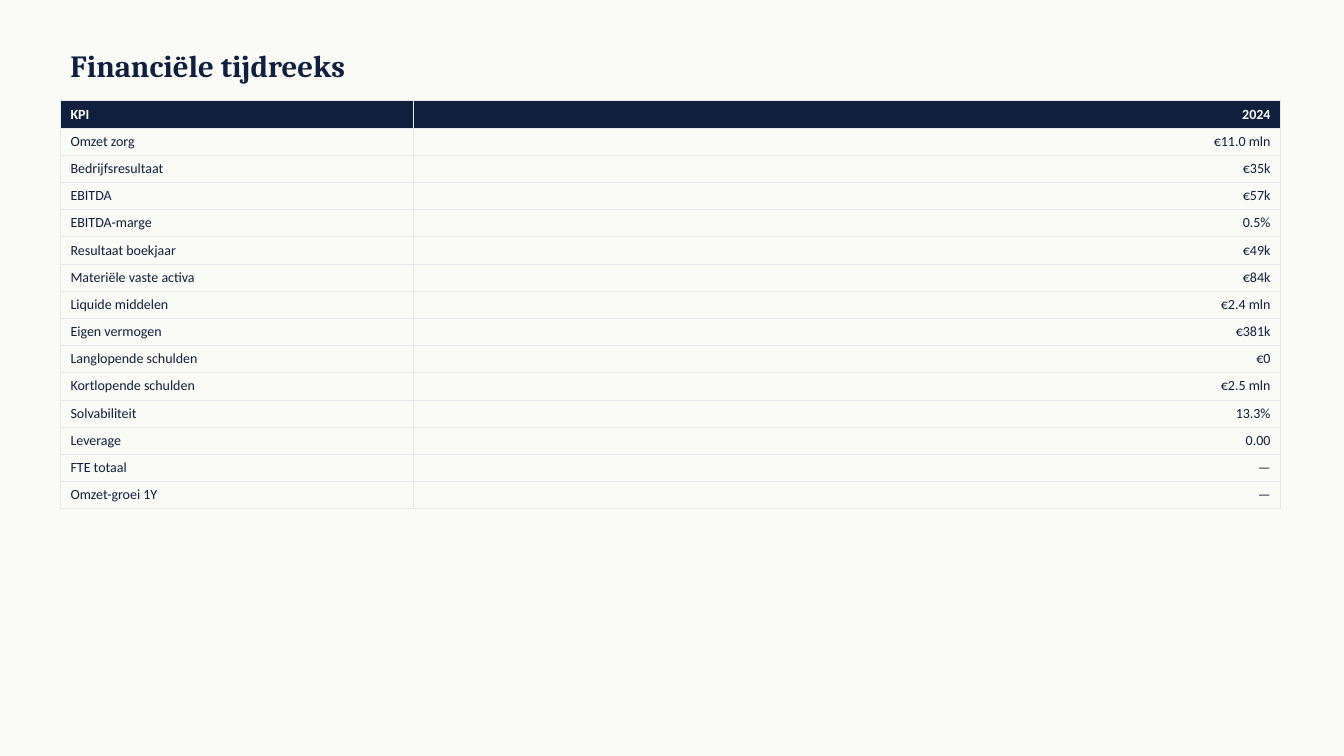
"""Builds the slide with the financial time series table."""
from typing import NamedTuple

import pptx
import pptx.dml.color
import pptx.enum.text
import pptx.oxml
import pptx.oxml.ns
import pptx.util

COLOURS = {"paper": "FAFAF7", "navy": "0F1F3D", "white": "FFFFFF", "rule": "E5E7EB"}
GRID = 0.1
LEFT = 6
TITLE_TOP, TITLE_COLUMNS, TITLE_ROWS = 4, 120, 5
TABLE_TOP, ROW_HEIGHT = 10, 2.7
COLUMN_WIDTHS = (35, 86)
ALIGNMENTS = (pptx.enum.text.PP_ALIGN.LEFT, pptx.enum.text.PP_ALIGN.RIGHT)


class Kpi(NamedTuple):
    label: str
    value: str


HEADING = Kpi("KPI", "2024")
KPIS = (
    Kpi("Omzet zorg", "€11.0 mln"),
    Kpi("Bedrijfsresultaat", "€35k"),
    Kpi("EBITDA", "€57k"),
    Kpi("EBITDA-marge", "0.5%"),
    Kpi("Resultaat boekjaar", "€49k"),
    Kpi("Materiële vaste activa", "€84k"),
    Kpi("Liquide middelen", "€2.4 mln"),
    Kpi("Eigen vermogen", "€381k"),
    Kpi("Langlopende schulden", "€0"),
    Kpi("Kortlopende schulden", "€2.5 mln"),
    Kpi("Solvabiliteit", "13.3%"),
    Kpi("Leverage", "0.00"),
    Kpi("FTE totaal", "—"),
    Kpi("Omzet-groei 1Y", "—"),
)


def units(count: float) -> int:
    return pptx.util.Inches(count * GRID)


def colour(name: str) -> pptx.dml.color.RGBColor:
    return pptx.dml.color.RGBColor.from_string(COLOURS[name])


def style(paragraph, font_name: str, size: float, ink: str, bold: bool) -> None:
    font = paragraph.font
    font.name, font.size, font.bold = font_name, pptx.util.Pt(size), bold
    font.color.rgb = colour(ink)


def add_borders(cell) -> None:
    properties = cell._tc.get_or_add_tcPr()
    for position, side in enumerate(("lnL", "lnR", "lnT", "lnB")):
        border = pptx.oxml.parse_xml(
            f'<a:{side} {pptx.oxml.ns.nsdecls("a")} w="{pptx.util.Pt(0.5)}"><a:solidFill>'
            f'<a:srgbClr val="{COLOURS["rule"]}"/></a:solidFill></a:{side}>'
        )
        properties.insert(position, border)


def add_title(slide) -> None:
    title = slide.shapes.add_textbox(
        units(LEFT), units(TITLE_TOP), units(TITLE_COLUMNS), units(TITLE_ROWS)
    ).text_frame
    title.word_wrap = True
    title.vertical_anchor = pptx.enum.text.MSO_ANCHOR.MIDDLE
    title.text = "Financiële tijdreeks"
    style(title.paragraphs[0], "Cambria", 22, "navy", True)


def fill_row(series, index: int, kpi: Kpi) -> None:
    is_heading = index == 0
    series.rows[index].height = units(ROW_HEIGHT)
    for column, (content, alignment) in enumerate(zip(kpi, ALIGNMENTS)):
        cell = series.cell(index, column)
        cell.text = content
        if is_heading:
            cell.fill.solid()
            cell.fill.fore_color.rgb = colour("navy")
        else:
            cell.fill.background()
        add_borders(cell)
        paragraph = cell.text_frame.paragraphs[0]
        paragraph.alignment = alignment
        style(paragraph, "Calibri", 10, "white" if is_heading else "navy", is_heading)


def add_series(slide) -> None:
    lines = (HEADING, *KPIS)
    series = slide.shapes.add_table(
        len(lines), len(COLUMN_WIDTHS), units(LEFT), units(TABLE_TOP),
        units(sum(COLUMN_WIDTHS)), units(ROW_HEIGHT * len(lines)),
    ).table
    series.horz_banding = False
    for column, width in zip(series.columns, COLUMN_WIDTHS):
        column.width = units(width)
    for index, kpi in enumerate(lines):
        fill_row(series, index, kpi)


def main() -> None:
    deck = pptx.Presentation()
    deck.slide_width, deck.slide_height = pptx.util.Inches(13.33), pptx.util.Inches(7.5)
    slide = deck.slides.add_slide(deck.slide_layouts[6])
    slide.background.fill.solid()
    slide.background.fill.fore_color.rgb = colour("paper")
    add_title(slide)
    add_series(slide)
    deck.save("out.pptx")


if __name__ == "__main__":
    main()
